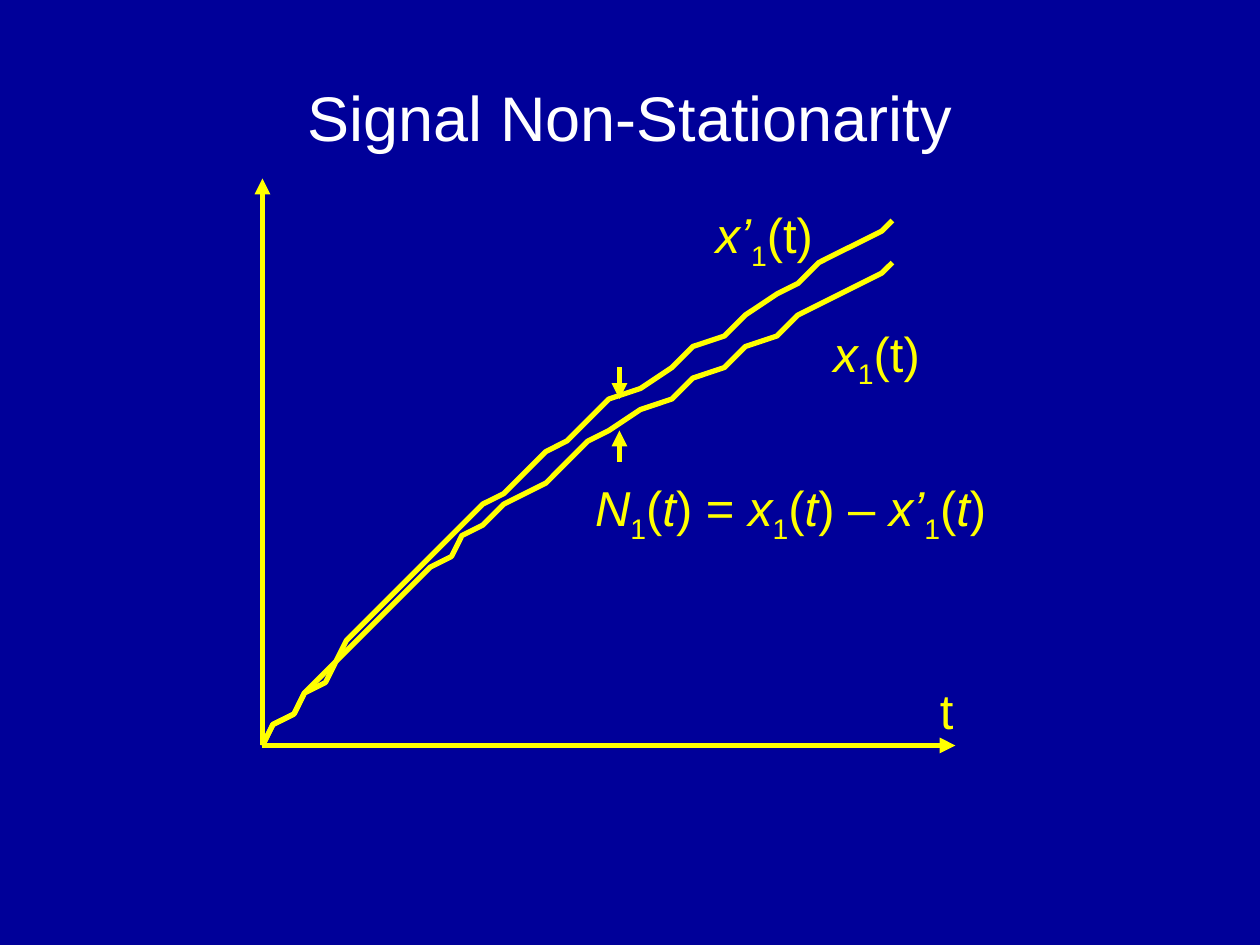
import lxml.etree
import pptx
import pptx.dml.color
import pptx.enum.shapes
import pptx.enum.text
import pptx.oxml.ns
import pptx.util

COLUMNS, ROWS = 120, 90
CELL = pptx.util.Inches(10) // COLUMNS
BACKGROUND, YELLOW, WHITE = "000099", "FFFF00", "FFFFFF"


def color(hex_string):
    return pptx.dml.color.RGBColor.from_string(hex_string)


def cells(*counts):
    return [round(count * CELL) for count in counts]


def bezier_points(start, control_1, control_2, end, steps=16):
    """Return points along a cubic curve, without its start."""
    points = []
    for step in range(1, steps + 1):
        t = step / steps
        weights = ((1 - t) ** 3, 3 * t * (1 - t) ** 2, 3 * t ** 2 * (1 - t), t ** 3)
        points.append(tuple(
            sum(weight * value for weight, value in zip(weights, values))
            for values in zip(start, control_1, control_2, end)))
    return points


class SlideBuilder:
    """Draws on one slide; all lengths are cells of a 120 by 90 grid."""

    def __init__(self, slide, font="Arial", line_width=3):
        self.slide = slide
        self.font = font
        self.line_width = pptx.util.Pt(line_width)

    def background(self, hex_string):
        fill = self.slide.background.fill
        fill.solid()
        fill.fore_color.rgb = color(hex_string)

    def style_line(self, line):
        line.color.rgb = color(YELLOW)
        line.width = self.line_width

    def arrow(self, start, end):
        connector = self.slide.shapes.add_connector(
            pptx.enum.shapes.MSO_CONNECTOR.STRAIGHT, *cells(*start, *end))
        self.style_line(connector.line)
        qualified = pptx.oxml.ns.qn
        properties = connector._element.spPr
        line = properties.find(qualified("a:ln"))
        lxml.etree.SubElement(line, qualified("a:tailEnd"), type="triangle")
        lxml.etree.SubElement(properties, qualified("a:effectLst"))

    def curve(self, start, *segments):
        """Draw joined cubic curves; a segment is two controls and an end."""
        points = [start]
        for segment in segments:
            points += bezier_points(points[-1], *segment)
        builder = self.slide.shapes.build_freeform(*start, scale=CELL)
        # Whole-unit scaling keeps fractional cells exact.
        builder.add_line_segments(points[1:], close=False)
        shape = builder.convert_to_shape()
        shape.shadow.inherit = False
        shape.fill.background()
        self.style_line(shape.line)

    def text(self, box, pieces, size=28, hex_string=YELLOW, wrap=False,
             tight=False, middle=False):
        """Add centred text; pieces pair words with "italic", "sub" or ""."""
        frame = self.slide.shapes.add_textbox(*cells(*box)).text_frame
        frame.word_wrap = wrap
        if middle:
            frame.vertical_anchor = pptx.enum.text.MSO_ANCHOR.MIDDLE
        paragraph = frame.paragraphs[0]
        paragraph.alignment = pptx.enum.text.PP_ALIGN.CENTER
        if tight:
            paragraph.line_spacing = 0.9
            paragraph.space_before = pptx.util.Pt(0.2 * size)
        for words, style in pieces:
            run = paragraph.add_run()
            run.text = words
            run.font.name = self.font
            run.font.size = pptx.util.Pt(size)
            run.font.color.rgb = color(hex_string)
            run.font.italic = style == "italic"
            if style == "sub":
                run._r.get_or_add_rPr().set("baseline", "-25000")


def signal(name, italic_time=False):
    """Return the pieces of a signal such as x1(t)."""
    time = [("(", ""), ("t", "italic"), (")", "")] if italic_time else [("(t)", "")]
    return [(name, "italic"), ("1", "sub")] + time


def main():
    presentation = pptx.Presentation()
    presentation.slide_width, presentation.slide_height = cells(COLUMNS, ROWS)
    slide = presentation.slides.add_slide(presentation.slide_layouts[6])
    builder = SlideBuilder(slide)
    builder.background(BACKGROUND)
    builder.text((6, 3.6, 108, 15), [("Signal Non-Stationarity", "")],
                 size=36, hex_string=WHITE, wrap=True, middle=True)

    origin = (25, 71)
    for axis_end in ((25, 17), (91, 71)):
        builder.arrow(origin, axis_end)

    builder.curve(origin,
                  ((32.4, 62.15), (39.75, 53.3), (49.7, 45)),
                  ((59.7, 36.7), (78.35, 25.4), (85, 21)))
    builder.curve(origin,
                  ((32.4, 62.9), (39.75, 54.7), (49.7, 47)),
                  ((59.7, 39.3), (78.35, 29.2), (85, 25)))

    builder.text((75, 30.2, 17, 6.8), signal("x"), wrap=True)
    builder.text((66.8, 19, 12, 6.2), signal("x’"), tight=True)
    builder.text((88.3, 64.2, 3.7, 6.8), [("t", "")])
    difference = (signal("N", True) + [(" = ", "")] + signal("x", True)
                  + [(" – ", "")] + signal("x’", True))
    builder.text((55, 45, 40.6, 6.2), difference, tight=True)

    for start_row, end_row in ((35, 38), (44, 41)):
        builder.arrow((59, start_row), (59, end_row))
    presentation.save("out.pptx")


if __name__ == "__main__":
    main()
